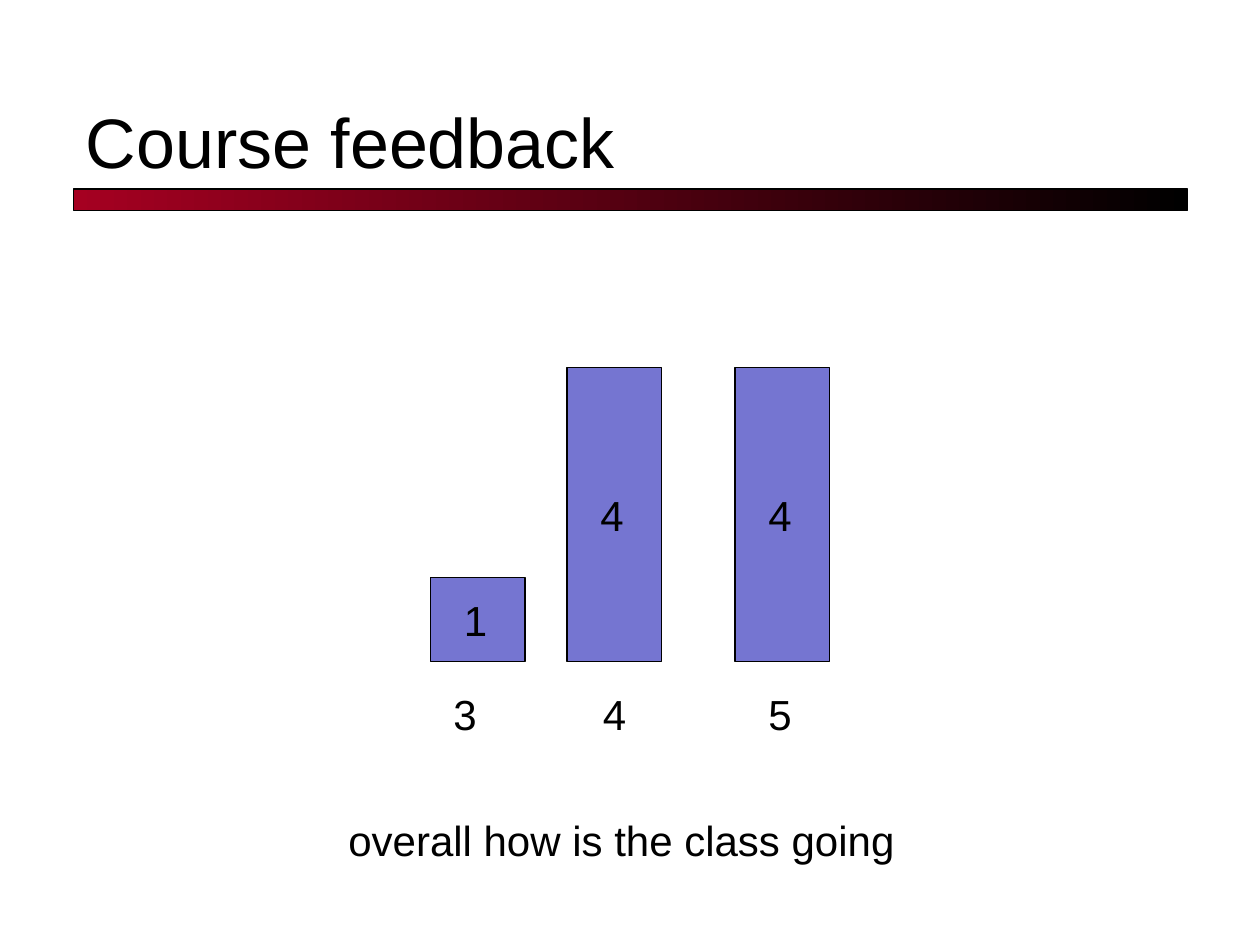
from dataclasses import dataclass

from pptx import Presentation
from pptx import util as u
from pptx.dml.color import RGBColor
from pptx.enum import shapes, text

BLACK = RGBColor(0x00, 0x00, 0x00)
CRIMSON = RGBColor(0xA5, 0x00, 0x21)
PERIWINKLE = RGBColor(0x75, 0x75, 0xD1)

FONT = "Arial"
BODY_SIZE = 24
BASELINE = 378
BAR_WIDTH = 54
LABEL_WIDTH = 28
LABEL_HEIGHT = 36
COUNT_INDENT = 12
RATING_TOP = 390


@dataclass(frozen=True)
class Box:
    left: float
    top: float
    width: float
    height: float

    def lengths(self) -> tuple:
        return tuple(u.Pt(n) for n in (self.left, self.top, self.width, self.height))


@dataclass(frozen=True)
class Bar:
    rating: str
    count: str
    left: float
    height: float
    rating_left: float


BARS = (
    Bar("5", "4", 420, 168, 432),
    Bar("4", "4", 324, 168, 337.5),
    Bar("3", "1", 246, 48, 252),
)


def add_label(slide, box: Box, wording: str, size: float = BODY_SIZE,
              anchor=text.MSO_ANCHOR.TOP, wrap: bool = False):
    shape = slide.shapes.add_textbox(*box.lengths())
    frame = shape.text_frame
    frame.word_wrap = wrap
    frame.vertical_anchor = anchor
    run = frame.paragraphs[0].add_run()
    run.text = wording
    run.font.name = FONT
    run.font.size = u.Pt(size)
    run.font.color.rgb = BLACK
    return shape


def add_rectangle(slide, box: Box):
    shape = slide.shapes.add_shape(shapes.MSO_SHAPE.RECTANGLE, *box.lengths())
    shape.shadow.inherit = False
    shape.line.color.rgb = BLACK
    shape.line.width = u.Pt(0.75)
    return shape


def add_title_rule(slide) -> None:
    fill = add_rectangle(slide, Box(42, 108, 636.5, 12.24)).fill
    fill.gradient()
    fill.gradient_angle = 0
    for stop, position, color in zip(fill.gradient_stops, (0, 1), (CRIMSON, BLACK)):
        stop.position = position
        stop.color.rgb = color


def add_bar(slide, bar: Bar) -> None:
    top = BASELINE - bar.height
    shape = add_rectangle(slide, Box(bar.left, top, BAR_WIDTH, bar.height))
    shape.fill.solid()
    shape.fill.fore_color.rgb = PERIWINKLE
    count_top = top + (bar.height - LABEL_HEIGHT) / 2
    add_label(slide, Box(bar.left + COUNT_INDENT, count_top, LABEL_WIDTH, LABEL_HEIGHT),
              bar.count)
    add_label(slide, Box(bar.rating_left, RATING_TOP, LABEL_WIDTH, LABEL_HEIGHT),
              bar.rating)


def main() -> None:
    presentation = Presentation()
    presentation.slide_width = u.Pt(720)
    presentation.slide_height = u.Pt(540)
    slide = presentation.slides.add_slide(presentation.slide_layouts[6])
    add_title_rule(slide)
    add_label(slide, Box(42, 30, 636, 78), "Course feedback", 40,
              text.MSO_ANCHOR.BOTTOM, True)
    add_label(slide, Box(192, 462, 330, LABEL_HEIGHT), "overall how is the class going")
    for bar in BARS:
        add_bar(slide, bar)
    presentation.save("out.pptx")


if __name__ == "__main__":
    main()
